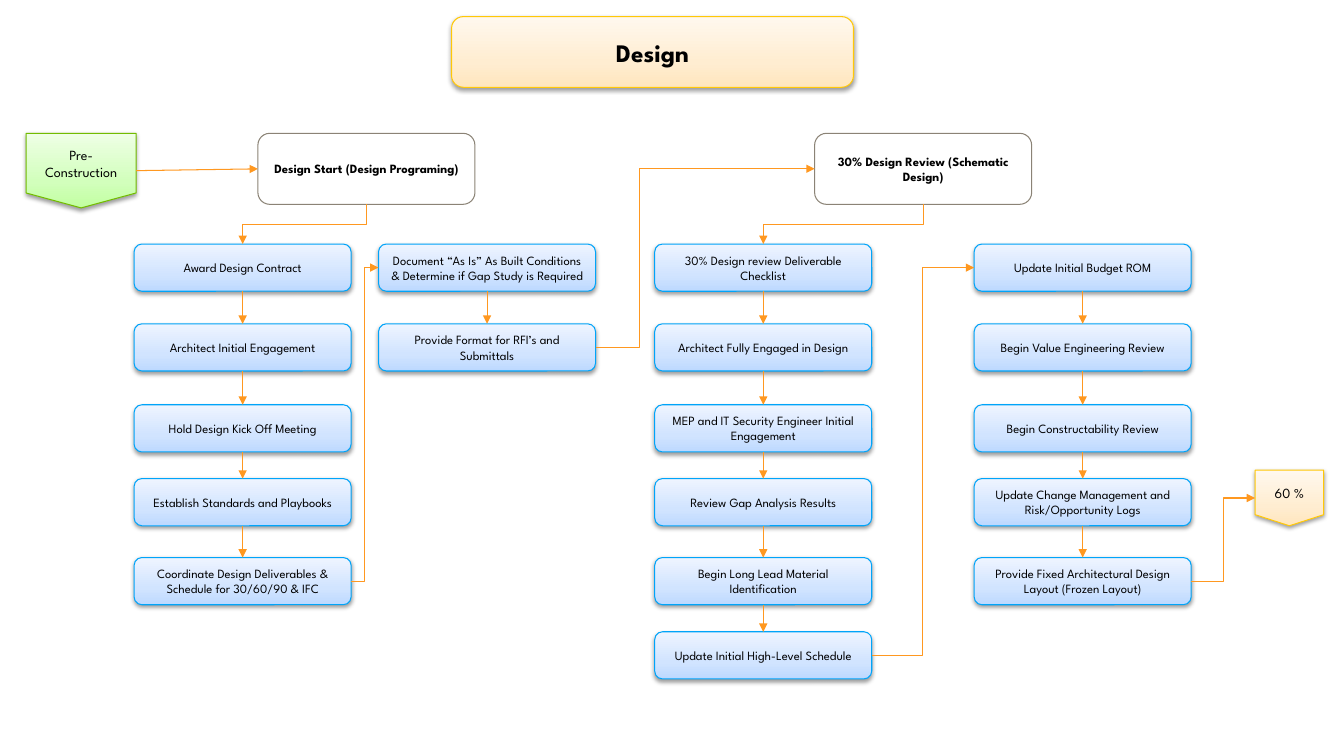
from itertools import pairwise

from lxml import etree
from pptx import Presentation
from pptx import util as u
from pptx.dml.color import RGBColor
from pptx.enum import shapes, text
from pptx.oxml import ns

FONT = "League Spartan"
BLACK = RGBColor(0x00, 0x00, 0x00)
ARROW_ORANGE = RGBColor(0xFF, 0x98, 0x20)
HEADING_LINE = RGBColor(0x8B, 0x83, 0x76)
STEP_LINE = RGBColor(0x00, 0xA4, 0xF9)
AMBER_LINE = RGBColor(0xFF, 0xC8, 0x08)
GREEN_LINE = RGBColor(0x72, 0xBC, 0x00)
STEP_FILL = (RGBColor(0xBD, 0xD9, 0xFF), RGBColor(0xD1, 0xE4, 0xFF), RGBColor(0xEE, 0xF4, 0xFF))
AMBER_FILL = (RGBColor(0xFF, 0xE6, 0xBD), RGBColor(0xFF, 0xED, 0xD1), RGBColor(0xFF, 0xF8, 0xEE))
GREEN_FILL = (RGBColor(0xC1, 0xFF, 0xA0), RGBColor(0xD2, 0xFF, 0xBC), RGBColor(0xEE, 0xFF, 0xE5))
GRADIENT_POSITIONS = (0, 35, 100)

ROUNDED = shapes.MSO_SHAPE.ROUNDED_RECTANGLE
OFFPAGE = shapes.MSO_SHAPE.FLOWCHART_OFFPAGE_CONNECTOR
STRAIGHT = shapes.MSO_CONNECTOR.STRAIGHT
ELBOW = shapes.MSO_CONNECTOR.ELBOW
TOP, LEFT, BOTTOM, RIGHT = range(4)

BOX_WIDTH = 5.47
STEP_HEIGHT = 1.19
HEADING_TOP = 3.36
HEADING_HEIGHT = 1.79
ROW_TOPS = (6.15, 8.16, 10.2, 12.06, 14.05, 15.92)

START_STEPS = (
    "Award Design Contract",
    "Architect Initial Engagement",
    "Hold Design Kick Off Meeting",
    "Establish Standards and Playbooks",
    "Coordinate Design Deliverables & Schedule for 30/60/90 & IFC",
)
FORMAT_STEPS = (
    "Document “As Is” As Built Conditions & Determine if Gap Study is Required",
    "Provide Format for RFI’s and Submittals",
)
REVIEW_STEPS = (
    "30% Design review Deliverable Checklist",
    "Architect Fully Engaged in Design",
    "MEP and IT Security Engineer Initial Engagement",
    "Review Gap Analysis Results",
    "Begin Long Lead Material Identification",
    "Update Initial High-Level Schedule",
)
BUDGET_STEPS = (
    "Update Initial Budget ROM",
    "Begin Value Engineering Review",
    "Begin Constructability Review",
    "Update Change Management and Risk/Opportunity Logs",
    "Provide Fixed Architectural Design Layout (Frozen Layout)",
)


def add_element(parent, tag, **attributes):
    return etree.SubElement(parent, ns.qn(tag), attributes)


def set_gradient(shape, colors):
    shape.fill.gradient()
    shape.fill.gradient_angle = 90
    stops = shape.element.spPr.find(".//" + ns.qn("a:gsLst"))
    stops.clear()
    for position, color in zip(GRADIENT_POSITIONS, colors):
        stop = add_element(stops, "a:gs", pos=str(position * 1000))
        add_element(stop, "a:srgbClr", val=str(color))


def add_shadow(shape):
    effects = shape.element.spPr.find(ns.qn("a:effectLst"))
    shadow = add_element(effects, "a:outerShdw", blurRad="40000", dist="20000",
                         dir="5400000", rotWithShape="0")
    color = add_element(shadow, "a:srgbClr", val=str(BLACK))
    add_element(color, "a:alpha", val="38000")


def add_box(slide, label, left, top, width, height, line_color, gradient=None,
            kind=ROUNDED, size=9, bold=False):
    shape = slide.shapes.add_shape(kind, u.Cm(left), u.Cm(top), u.Cm(width), u.Cm(height))
    shape.shadow.inherit = False
    shape.line.color.rgb = line_color
    shape.line.width = u.Pt(0.75)
    if gradient:
        set_gradient(shape, gradient)
        add_shadow(shape)
    else:
        shape.fill.background()
    frame = shape.text_frame
    frame.word_wrap = True
    frame.vertical_anchor = text.MSO_ANCHOR.MIDDLE
    paragraph = frame.paragraphs[0]
    paragraph.alignment = text.PP_ALIGN.CENTER
    run = paragraph.add_run()
    run.text = label
    run.font.name = FONT
    run.font.size = u.Pt(size)
    run.font.bold = bold
    run.font.color.rgb = BLACK
    return shape


def add_heading(slide, label, left):
    return add_box(slide, label, left, HEADING_TOP, BOX_WIDTH, HEADING_HEIGHT,
                   HEADING_LINE, bold=True)


def add_arrow(slide, kind, source, source_side, target, target_side):
    connector = slide.shapes.add_connector(kind, 0, 0, 0, 0)
    connector.begin_connect(source, source_side)
    connector.end_connect(target, target_side)
    connector.line.color.rgb = ARROW_ORANGE
    connector.line.width = u.Pt(0.75)
    add_element(connector.line._get_or_add_ln(), "a:tailEnd", type="triangle")
    add_element(connector.element.spPr, "a:effectLst")
    return connector


def add_side_elbow(slide, source, target, bend=50):
    connector = add_arrow(slide, ELBOW, source, RIGHT, target, LEFT)
    adjustments = connector.element.spPr.find(".//" + ns.qn("a:avLst"))
    add_element(adjustments, "a:gd", name="adj1", fmla=f"val {bend * 1000}")


def add_down_elbow(slide, source, target):
    connector = add_arrow(slide, ELBOW, source, BOTTOM, target, TOP)
    width, height = connector.width, connector.height
    center_x = connector.left + width // 2
    center_y = connector.top + height // 2
    connector.left, connector.top = center_x - height // 2, center_y - width // 2
    connector.width, connector.height = height, width
    transform = connector.element.spPr.find(ns.qn("a:xfrm"))
    transform.attrib.pop("flipH", None)
    transform.set("rot", "5400000")


def add_steps(slide, labels, left):
    steps = [add_box(slide, label, left, top, BOX_WIDTH, STEP_HEIGHT, STEP_LINE, STEP_FILL)
             for label, top in zip(labels, ROW_TOPS)]
    for upper, lower in pairwise(steps):
        add_arrow(slide, STRAIGHT, upper, BOTTOM, lower, TOP)
    return steps


def main():
    presentation = Presentation()
    presentation.slide_width = u.Cm(33.87)
    presentation.slide_height = u.Cm(19.05)
    slide = presentation.slides.add_slide(presentation.slide_layouts[6])

    add_box(slide, "Design", 11.38, 0.42, 10.13, 1.78, AMBER_LINE, AMBER_FILL,
            size=18, bold=True)
    pre_construction = add_box(slide, "Pre-Construction", 0.66, HEADING_TOP, 2.77, 1.88,
                               GREEN_LINE, GREEN_FILL, OFFPAGE, size=10)
    design_start = add_heading(slide, "Design Start (Design Programing)", 6.5)
    design_review = add_heading(slide, "30% Design Review (Schematic Design)", 20.53)

    start_steps = add_steps(slide, START_STEPS, 3.38)
    format_steps = add_steps(slide, FORMAT_STEPS, 9.54)
    review_steps = add_steps(slide, REVIEW_STEPS, 16.5)
    budget_steps = add_steps(slide, BUDGET_STEPS, 24.55)
    sixty_percent = add_box(slide, "60 %", 31.63, 11.85, 1.73, 1.4, AMBER_LINE,
                            AMBER_FILL, OFFPAGE, size=10)

    add_arrow(slide, STRAIGHT, pre_construction, RIGHT, design_start, LEFT)
    add_down_elbow(slide, design_start, start_steps[0])
    add_side_elbow(slide, start_steps[-1], format_steps[0])
    add_side_elbow(slide, format_steps[-1], design_review, bend=20)
    add_down_elbow(slide, design_review, review_steps[0])
    add_side_elbow(slide, review_steps[-1], budget_steps[0])
    add_side_elbow(slide, budget_steps[-1], sixty_percent)

    presentation.save("out.pptx")


if __name__ == "__main__":
    main()
